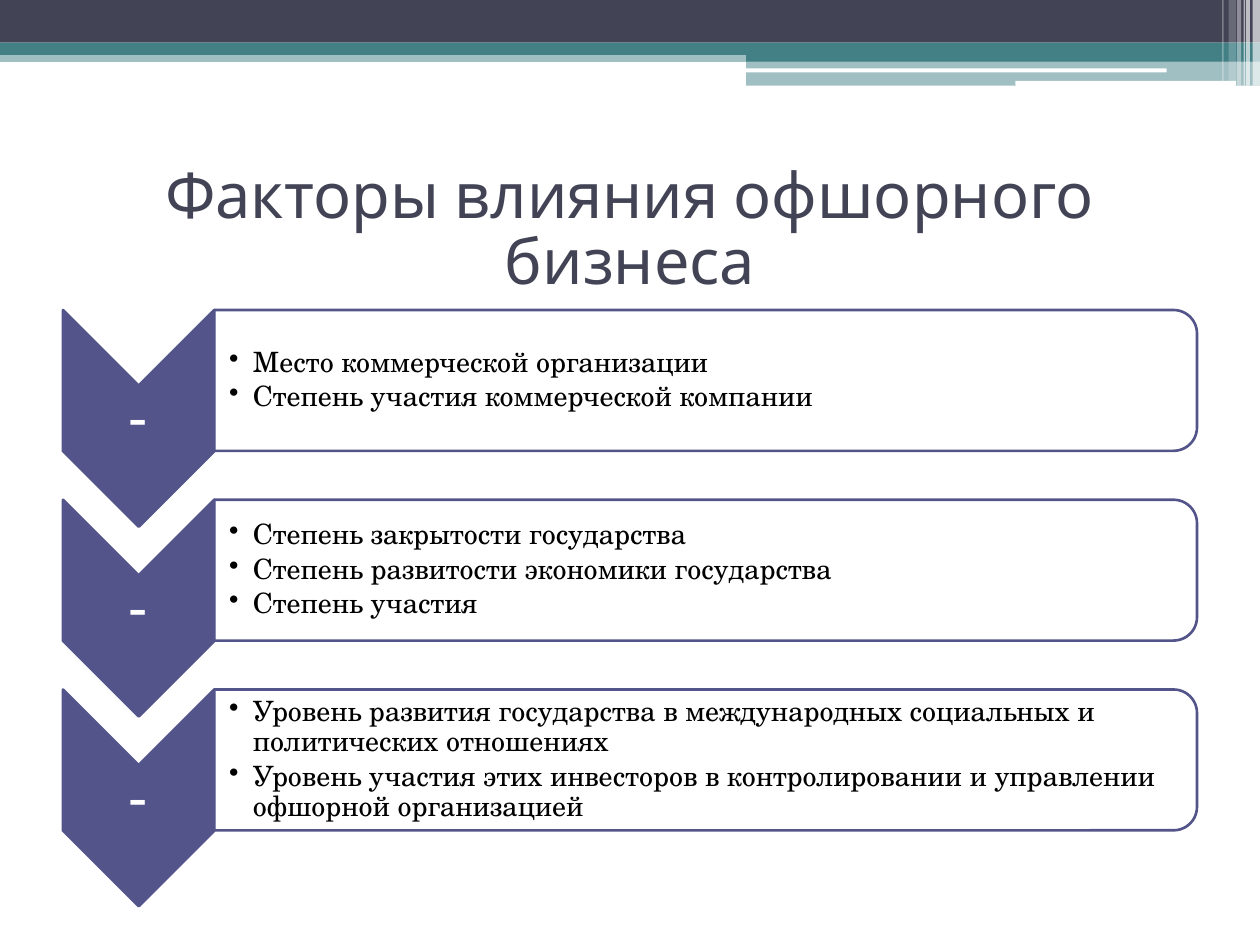
from dataclasses import dataclass

from lxml import etree
from pptx import Presentation
from pptx.dml.color import RGBColor
from pptx.enum.shapes import MSO_SHAPE
from pptx.enum.text import MSO_ANCHOR, MSO_AUTO_SIZE, PP_ALIGN
from pptx.oxml.ns import qn
from pptx.util import Cm, Pt

RECT = MSO_SHAPE.RECTANGLE
ROUNDED = MSO_SHAPE.ROUNDED_RECTANGLE
CHEVRON = MSO_SHAPE.CHEVRON
PANEL = MSO_SHAPE.ROUND_2_SAME_RECTANGLE
MIDDLE = MSO_ANCHOR.MIDDLE
NO_FIT = MSO_AUTO_SIZE.NONE
CENTER, LEFT = PP_ALIGN.CENTER, PP_ALIGN.LEFT
TITLE_ONLY = 5


@dataclass(frozen=True)
class Theme:
    dark: str = "424456"
    teal: str = "438086"
    accent: str = "53548A"
    light: str = "FFFFFF"
    text: str = "000000"
    title_font: str = "Karla"
    body_font: str = "TeX Gyre Schola"
    title_size: int = 36
    mark_size: int = 33
    body_size: int = 16
    outline: float = 1.5


@dataclass(frozen=True)
class Box:
    """A rectangle in centimetres."""
    left: float
    top: float
    width: float
    height: float

    def inner(self, left, top, width, height):
        return Box(self.left + left, self.top + top, width, height)

    def before_turn(self):
        """The box that covers this one after a quarter turn."""
        shift = (self.width - self.height) / 2
        return self.inner(shift, -shift, self.height, self.width)

    def lengths(self):
        return [Cm(value) for value in (self.left, self.top, self.width, self.height)]


THEME = Theme()
FACTORS = [
    ["Место коммерческой организации",
     "Степень участия коммерческой компании"],
    ["Степень закрытости государства",
     "Степень развитости экономики государства",
     "Степень участия"],
    ["Уровень развития государства в международных социальных и политических отношениях",
     "Уровень участия этих инвесторов в контролировании и управлении офшорной организацией"],
]


def add_figure(page, kind, box, color, opacity=100, outline=None):
    shape = page.shapes.add_shape(kind, *box.lengths())
    shape.shadow.inherit = False
    shape.fill.solid()
    shape.fill.fore_color.rgb = RGBColor.from_string(color)
    if opacity < 100:
        tint = shape.fill._xPr.find(qn("a:solidFill"))[0]
        etree.SubElement(tint, qn("a:alpha"), val=str(opacity * 1000))
    if outline:
        shape.line.color.rgb = RGBColor.from_string(outline)
        shape.line.width = Pt(THEME.outline)
    else:
        shape.line.fill.background()
    return shape


def add_turned(page, kind, box, color, opacity=100):
    shape = add_figure(page, kind, box.before_turn(), color, opacity, THEME.accent)
    shape.rotation = 90


def add_span(para, text, font, size, color):
    span = para.add_run()
    span.text = text
    span.font.name = font
    span.font.size = Pt(size)
    span.font.color.rgb = RGBColor.from_string(color)


def add_text_frame(page, box, left_inset, inset):
    frame = page.shapes.add_textbox(*box.lengths()).text_frame
    frame.word_wrap = True
    frame.vertical_anchor = MIDDLE
    frame.margin_left = Cm(left_inset)
    frame.margin_right = frame.margin_top = frame.margin_bottom = Cm(inset)
    return frame


def space_para(para, align, after):
    para.alignment = align
    para.line_spacing = 0.9
    para.space_after = Pt(after)


def set_bullet(para):
    props = para._p.get_or_add_pPr()
    props.set("marL", str(Cm(0.48)))
    props.set("indent", str(-Cm(0.48)))
    etree.SubElement(props, qn("a:buChar"), char="•")


def draw_header(page, box):
    """Bands across the top, a stepped block on the right and thin stripes at the edge."""
    step = 15.04
    rest = box.width - step
    bands = [
        (RECT, (0, 1.02, box.width, 0.23), THEME.teal, 50),
        (RECT, (0, 0, box.width, 0.86), THEME.dark, 100),
        (RECT, (0, 0.86, box.width, 0.25), THEME.teal, 100),
        (RECT, (step, 0.99, rest, 0.25), THEME.teal, 100),
        (RECT, (step, 1.23, rest, 0.5), THEME.teal, 50),
        (ROUNDED, (15.01, 1.38, 8.51, 0.08), THEME.light, 100),
        (ROUNDED, (20.47, 1.63, 4.45, 0.1), THEME.light, 100),
    ]
    stripes = [(25.25, 0.15, 1.73, 65), (25.12, 0.08, 1.73, 65), (25.07, 0.03, 1.73, 60),
               (24.94, 0.08, 1.73, 40), (24.77, 0.15, 1.63, 20), (24.64, 0.03, 1.63, 30)]
    bands += [(RECT, (left, 0, width, height), THEME.light, opacity)
              for left, width, height, opacity in stripes]
    for kind, place, color, opacity in bands:
        add_figure(page, kind, box.inner(*place), color, opacity)


def set_title(page, box, text):
    title = page.shapes.title
    title.left, title.top, title.width, title.height = box.lengths()
    frame = title.text_frame
    frame.auto_size = NO_FIT
    frame.word_wrap = True
    frame.vertical_anchor = MIDDLE
    para = frame.paragraphs[0]
    para.alignment = CENTER
    para.line_spacing = 0.88
    add_span(para, text, THEME.title_font, THEME.title_size, THEME.dark)


def draw_factor_row(page, box, points):
    """A downward chevron with a dash, and a panel of bullet points beside it."""
    arrow_width, panel_height = 3.05, 2.84
    panel_width = box.width - arrow_width
    add_turned(page, CHEVRON, box.inner(0, 0, arrow_width, box.height), THEME.accent)
    mark = add_text_frame(page, box.inner(0, 1.52, arrow_width, 1.32), 0.05, 0.05).paragraphs[0]
    space_para(mark, CENTER, THEME.mark_size * 0.35)
    add_span(mark, "-", THEME.body_font, THEME.mark_size, THEME.light)

    panel = box.inner(arrow_width, 0, panel_width, panel_height)
    add_turned(page, PANEL, panel, THEME.light, 90)
    frame = add_text_frame(page, panel.inner(0, 0.14, panel_width - 0.14, 2.56), 0.3, 0.03)
    for index, point in enumerate(points):
        para = frame.add_paragraph() if index else frame.paragraphs[0]
        para.level = 1
        space_para(para, LEFT, THEME.body_size * 0.15)
        set_bullet(para)
        add_span(para, point, THEME.body_font, THEME.body_size, THEME.text)


def draw_factors(page, box, factors):
    row_height = 4.37
    pitch = (box.height - row_height) / (len(factors) - 1)
    for index, points in enumerate(factors):
        draw_factor_row(page, box.inner(0, index * pitch, box.width, row_height), points)


def main():
    deck = Presentation()
    deck.slide_width, deck.slide_height = Cm(25.4), Cm(19.05)
    page = deck.slides.add_slide(deck.slide_layouts[TITLE_ONLY])
    draw_header(page, Box(0, 0, 25.4, 1.73))
    set_title(page, Box(1.27, 3.18, 22.86, 2.97), "Факторы влияния офшорного бизнеса")
    draw_factors(page, Box(1.27, 6.25, 22.86, 12.02), FACTORS)
    deck.save("out.pptx")


if __name__ == "__main__":
    main()
